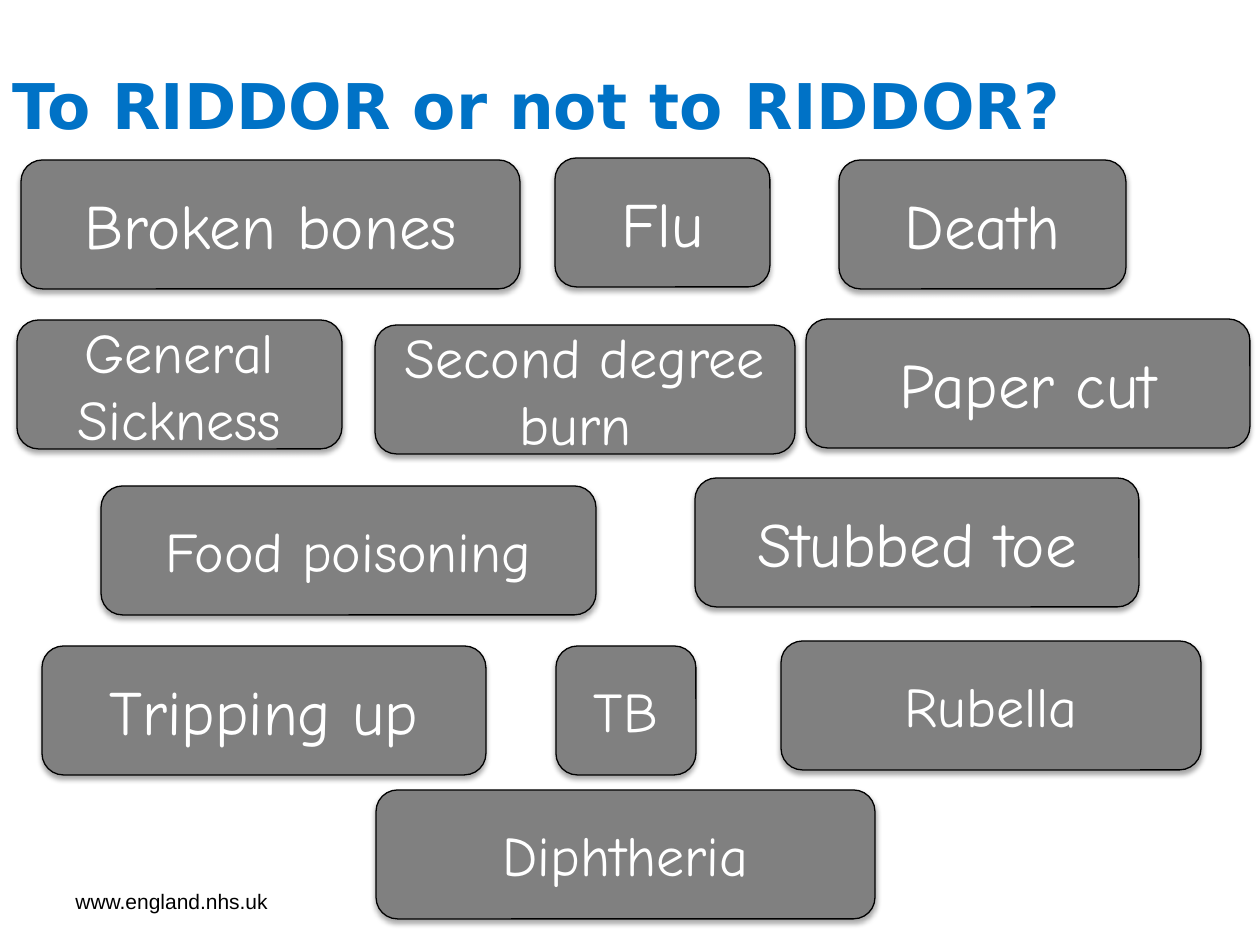
from dataclasses import dataclass

from lxml.etree import SubElement
from pptx import Presentation
from pptx.dml.color import RGBColor
from pptx.enum.shapes import MSO_SHAPE
from pptx.enum.text import MSO_ANCHOR, PP_ALIGN
from pptx.oxml.ns import qn
from pptx.util import Emu, Pt

EMU_PER_PX = 914400 / 126
CARD_HEIGHT = 129
BLUE, GREY, BLACK, WHITE = "0072C6", "808080", "000000", "FFFFFF"


@dataclass
class Card:
    text: str
    left: int
    top: int
    width: int
    size: int = 36


CARDS = [
    # Row 1
    Card("Broken bones", 21, 160, 499),
    Card("Flu", 555, 158, 215),
    Card("Death", 839, 160, 287),
    # Row 2
    Card("General Sickness", 17, 320, 325, 32),
    Card("Second degree burn ", 375, 325, 420, 32),
    Card("Paper cut", 806, 319, 444),
    # Row 3
    Card("Stubbed toe", 695, 478, 444),
    Card("Food poisoning", 101, 486, 495, 32),
    # Row 4
    Card("Tripping up", 42, 646, 444),
    Card("Rubella", 781, 641, 420, 32),
    Card("TB", 556, 646, 140, 32),
    # Row 5
    Card("Diphtheria", 376, 790, 499, 32),
]


def px(length: int) -> Emu:
    return Emu(round(length * EMU_PER_PX))


def color(value: str) -> RGBColor:
    return RGBColor.from_string(value)


def write_text(shape, text: str, *, font: str, size: int, fill: str,
               bold: bool = False, align=PP_ALIGN.LEFT) -> None:
    frame = shape.text_frame
    frame.word_wrap = True
    frame.vertical_anchor = MSO_ANCHOR.MIDDLE
    paragraph = frame.paragraphs[0]
    paragraph.alignment = align
    run = paragraph.add_run()
    run.text = text
    run.font.name = font
    run.font.size = Pt(size)
    run.font.bold = bold
    run.font.color.rgb = color(fill)


def add_soft_shadow(shape) -> None:
    shape.shadow.inherit = False
    effects = shape._element.spPr.find(qn("a:effectLst"))
    shadow = SubElement(effects, qn("a:outerShdw"), blurRad=str(Pt(3.1)),
                        dist=str(Pt(1.8)), dir="5400000", rotWithShape="0")
    shade = SubElement(shadow, qn("a:srgbClr"), val=BLACK)
    SubElement(shade, qn("a:alpha"), val="35000")


def add_card(slide, card: Card) -> None:
    shape = slide.shapes.add_shape(
        MSO_SHAPE.ROUNDED_RECTANGLE,
        px(card.left), px(card.top), px(card.width), px(CARD_HEIGHT))
    shape.fill.solid()
    shape.fill.fore_color.rgb = color(GREY)
    shape.line.color.rgb = color(BLACK)
    shape.line.width = Pt(0.75)
    add_soft_shadow(shape)
    write_text(shape, card.text, font="Comic Neue", size=card.size,
               fill=WHITE, align=PP_ALIGN.CENTER)


def main() -> None:
    presentation = Presentation()
    presentation.slide_width, presentation.slide_height = px(1260), px(945)
    slide = presentation.slides.add_slide(presentation.slide_layouts[5])

    # Web address in the footer
    footer = slide.shapes.add_textbox(px(63), px(876), px(294), px(50))
    write_text(footer, "www.england.nhs.uk", font="Arial", size=12, fill=BLACK)

    # Title
    title = slide.shapes.title
    title.left, title.top, title.width, title.height = (
        px(0), px(58), px(1126), px(92))
    write_text(title, "To RIDDOR or not to RIDDOR?", font="DejaVu Sans",
               size=36, fill=BLUE, bold=True)

    # Incident cards
    for card in CARDS:
        add_card(slide, card)

    presentation.save("out.pptx")


if __name__ == "__main__":
    main()
